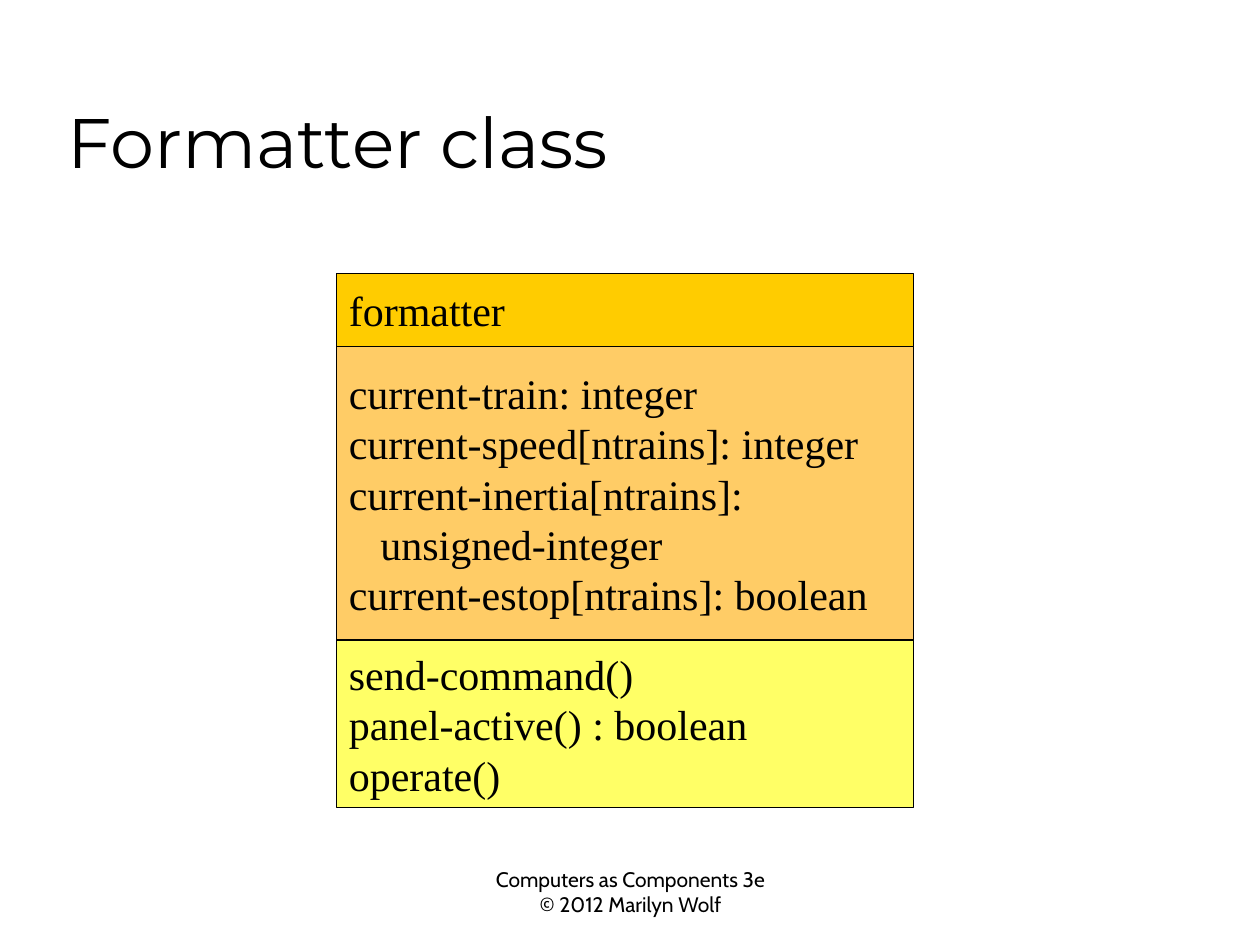
import pptx
import pptx.dml.color
import pptx.enum.shapes
import pptx.enum.text
import pptx.util

Inches = pptx.util.Inches
ALIGN = pptx.enum.text.PP_ALIGN
ANCHOR = pptx.enum.text.MSO_ANCHOR

COLORS = {
    "ink": "000000",
    "paper": "FFFFFF",
    "name": "FFCC00",
    "attributes": "FFCC66",
    "operations": "FFFF66",
}


def color(name):
    return pptx.dml.color.RGBColor.from_string(COLORS[name])


def write_text(frame, lines, *, font, size, align=ALIGN.LEFT,
               anchor=ANCHOR.TOP, indented=(), indent=0.25):
    """Write one paragraph per line; lines listed in indented are set in."""
    frame.word_wrap = True
    frame.vertical_anchor = anchor
    for index, line in enumerate(lines):
        para = frame.paragraphs[0] if index == 0 else frame.add_paragraph()
        para.alignment = align
        if line in indented:
            properties = para._p.get_or_add_pPr()
            properties.set("marL", str(Inches(indent)))
            properties.set("indent", "0")
        span = para.add_run()
        span.text = line
        span.font.name = font
        span.font.size = pptx.util.Pt(size)
        span.font.color.rgb = color("ink")


class ClassSlide:
    """Style and current page of a class diagram."""

    title_font = "Montserrat"
    footer_font = "Cabin"
    diagram_font = "Times New Roman"
    line_width = 0.75

    def __init__(self, deck):
        self.page = deck.slides.add_slide(deck.slide_layouts[6])
        fill = self.page.background.fill
        fill.solid()
        fill.fore_color.rgb = color("paper")

    def text(self, place, lines, **style):
        box = self.page.shapes.add_textbox(*map(Inches, place))
        write_text(box.text_frame, lines, **style)

    def title(self, text):
        self.text((0.44, 0.25, 8.5, 1.25), [text], font=self.title_font,
                  size=40, anchor=ANCHOR.BOTTOM)

    def footer(self, lines):
        self.text((3.67, 6.83, 2.67, 0.5), lines, font=self.footer_font,
                  size=12, align=ALIGN.CENTER)

    def compartment(self, place, fill, lines, indented=()):
        box = self.page.shapes.add_shape(
            pptx.enum.shapes.MSO_SHAPE.RECTANGLE, *map(Inches, place))
        box.shadow.inherit = False
        box.fill.solid()
        box.fill.fore_color.rgb = color(fill)
        box.line.color.rgb = color("ink")
        box.line.width = pptx.util.Pt(self.line_width)
        write_text(box.text_frame, lines, font=self.diagram_font, size=24,
                   anchor=ANCHOR.MIDDLE, indented=indented)

    def class_box(self, left, top, width, compartments, indented=()):
        """Stack the compartments of one class without gaps."""
        for fill, height, lines in compartments:
            self.compartment((left, top, width, height), fill, lines, indented)
            top += height


def main():
    deck = pptx.Presentation()
    deck.slide_width = Inches(10)
    deck.slide_height = Inches(7.5)
    slide = ClassSlide(deck)

    # Footer and title
    slide.footer(["Computers as Components 3e", "© 2012 Marilyn Wolf"])
    slide.title("Formatter class")

    # Class diagram: name, attributes, operations
    slide.class_box(2.67, 2.17, 4.58, [
        ("name", 0.58, ["formatter"]),
        ("attributes", 2.33, [
            "current-train: integer",
            "current-speed[ntrains]: integer",
            "current-inertia[ntrains]:",
            "unsigned-integer",
            "current-estop[ntrains]: boolean",
        ]),
        ("operations", 1.33, [
            "send-command()",
            "panel-active() : boolean",
            "operate()",
        ]),
    ], indented=["unsigned-integer"])

    deck.save("out.pptx")


if __name__ == "__main__":
    main()
